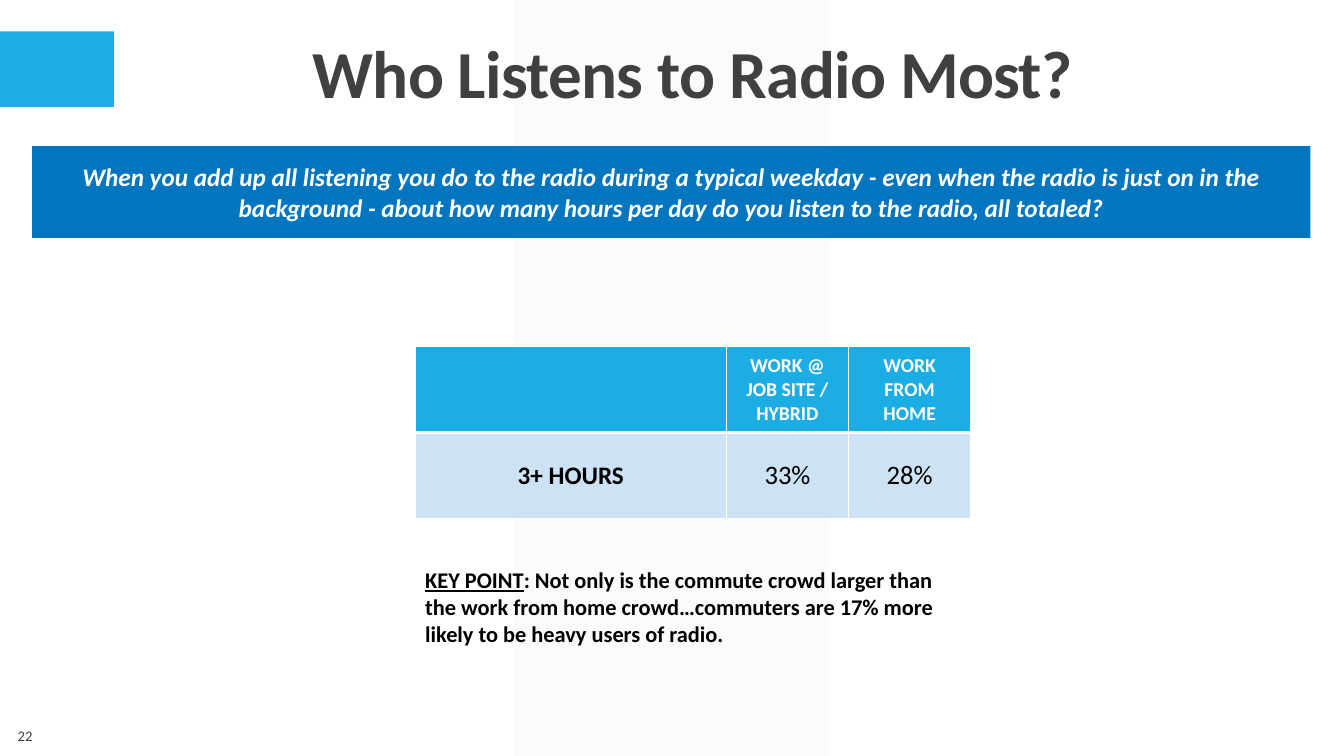
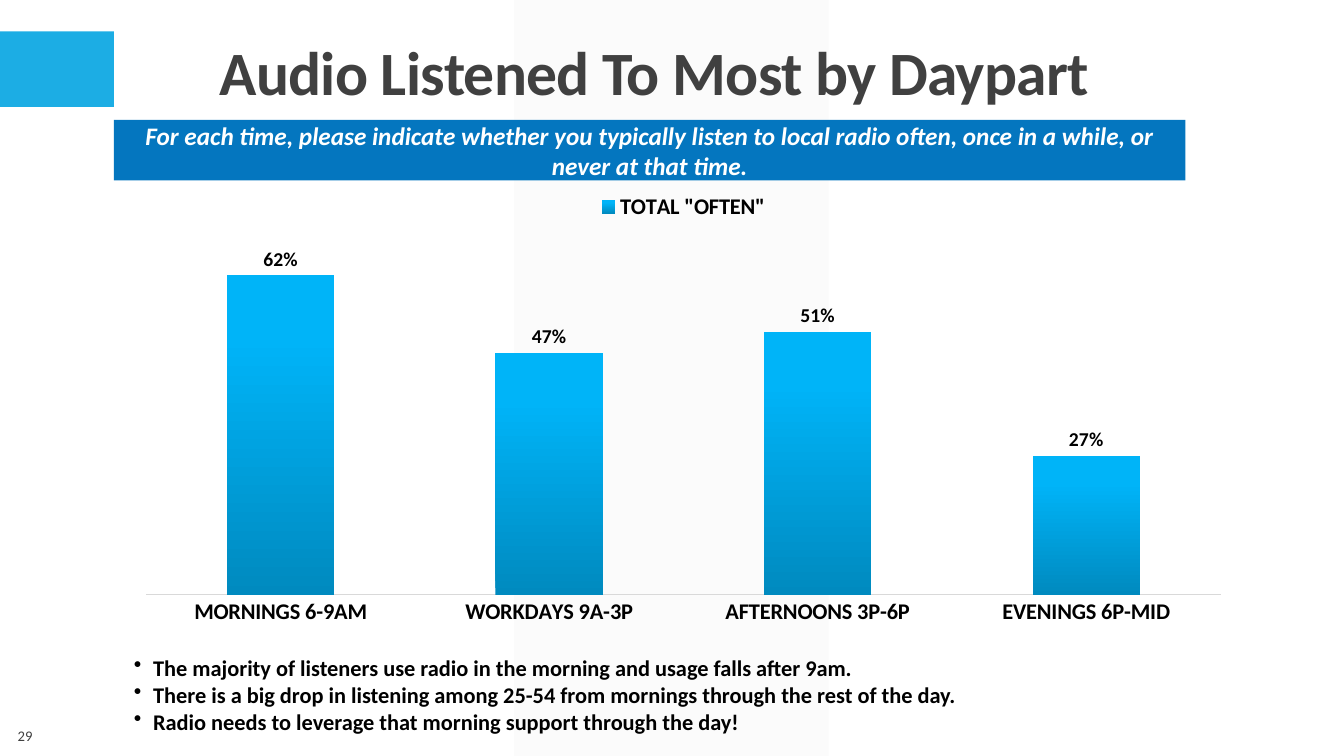
from dataclasses import dataclass

from lxml import etree
from pptx import Presentation
from pptx import util as u
from pptx.chart.data import CategoryChartData
from pptx.dml.color import RGBColor
from pptx.enum import chart as charts, shapes, text
from pptx.oxml import parse_xml
from pptx.oxml.ns import nsdecls, qn


@dataclass(frozen=True)
class Theme:
    font: str = "Calibri"
    accent: str = "1CADE4"
    banner: str = "0476BF"
    strip: str = "F2F2F2"
    strip_opacity: int = 30
    row: str = "CDE3F5"
    axis: str = "D9D9D9"
    white: str = "FFFFFF"
    black: str = "000000"
    grey: str = "404040"
    bar_stops: tuple = ((0, "008ABF"), (80, "00B4F8"), (100, "00B5F9"))
    body: float = 16
    question: float = 18
    small: float = 14
    number: float = 10.5


THEME = Theme()
WIDTH, HEIGHT = u.Inches(13.333), u.Inches(7.5)
CENTER, LEFT, RIGHT = (text.PP_ALIGN.CENTER, text.PP_ALIGN.LEFT,
                       text.PP_ALIGN.RIGHT)
MIDDLE, TOP, BOTTOM = (text.MSO_ANCHOR.MIDDLE, text.MSO_ANCHOR.TOP,
                       text.MSO_ANCHOR.BOTTOM)


def place(left, top, width, height):
    """Turn percentages of the slide into left, top, width, height."""
    return [int(share * size / 100) for share, size in
            zip((left, top, width, height), (WIDTH, HEIGHT) * 2)]


# Text
def set_font(font, size, color=THEME.black, bold=True, italic=None,
             underline=None):
    font.name, font.size = THEME.font, u.Pt(size)
    font.bold, font.italic, font.underline = bold, italic, underline
    font.color.rgb = RGBColor.from_string(color)


def add_bullet(para, indent=0.19):
    props = para._p.get_or_add_pPr()
    props.set("marL", str(u.Inches(indent)))
    props.set("indent", str(-u.Inches(indent)))
    etree.SubElement(props, qn("a:buChar")).set("char", "•")


def write(frame, paras, *, size, align=LEFT, anchor=TOP, bullet=False,
          line_spacing=None, tracking=None, lead=None, **font):
    """Fill a frame with paragraphs; lead is an underlined opening."""
    frame.word_wrap = True
    frame.vertical_anchor = anchor
    for index, words in enumerate(paras):
        para = frame.add_paragraph() if index else frame.paragraphs[0]
        para.alignment = align
        if line_spacing:
            para.line_spacing = line_spacing
        if bullet:
            add_bullet(para)
        if lead and not index:
            span = para.add_run()
            span.text = lead
            set_font(span.font, size, underline=True, **font)
        span = para.add_run()
        span.text = words
        set_font(span.font, size, **font)
        if tracking:
            span._r.get_or_add_rPr().set("spc", str(int(tracking * 100)))


def add_text(page, area, *paras, **style):
    box = page.shapes.add_textbox(*place(*area))
    write(box.text_frame, paras, **style)


# Shapes
def add_block(page, area, color, opacity=None):
    block = page.shapes.add_shape(shapes.MSO_SHAPE.RECTANGLE, *place(*area))
    block.shadow.inherit = False
    block.fill.solid()
    block.fill.fore_color.rgb = RGBColor.from_string(color)
    block.line.fill.background()
    if opacity is not None:
        tint = block._element.spPr.find(".//" + qn("a:srgbClr"))
        etree.SubElement(tint, qn("a:alpha")).set("val", str(opacity * 1000))
    return block


def add_page(deck, number, title, title_left, title_top, title_size,
             question, banner_area):
    """Start a page with background strip, accent, title, banner, number."""
    page = deck.slides.add_slide(deck.slide_layouts[6])
    add_block(page, (38.25, 0, 23.4, 100), THEME.strip, THEME.strip_opacity)
    add_block(page, (0, 4.15, 8.48, 10), THEME.accent)
    banner = add_block(page, banner_area, THEME.banner)
    write(banner.text_frame, [question], size=THEME.question, align=CENTER,
          anchor=MIDDLE, color=THEME.white, italic=True)
    add_text(page, (title_left, title_top, 82.5, 10), title, size=title_size,
             align=CENTER, anchor=BOTTOM, color=THEME.grey,
             line_spacing=0.9, tracking=-0.5)
    add_text(page, (0, 94.67, 3.15, 5.33), str(number), size=THEME.number,
             align=RIGHT, anchor=MIDDLE, color=THEME.grey, bold=False)
    return page


# Table
def style_cell(cell, fill, bottom):
    props = cell._tc.get_or_add_tcPr()
    for side, points in (("L", 1), ("R", 1), ("T", 1), ("B", bottom)):
        props.append(parse_xml(
            f'<a:ln{side} {nsdecls("a")} w="{u.Pt(points)}"><a:solidFill>'
            f'<a:srgbClr val="{THEME.white}"/></a:solidFill></a:ln{side}>'))
    cell.fill.solid()
    cell.fill.fore_color.rgb = RGBColor.from_string(fill)
    cell.vertical_anchor = MIDDLE


def add_grid(page, area, rows, column_shares):
    left, top, width, height = place(*area)
    grid = page.shapes.add_table(len(rows), len(column_shares), left, top,
                                 width, height).table
    grid.horz_banding = False
    for column, share in zip(grid.columns, column_shares):
        column.width = int(width * share / 100)
    for r, row in enumerate(rows):
        for c, words in enumerate(row):
            cell = grid.cell(r, c)
            if r == 0:
                style_cell(cell, THEME.accent, bottom=3)
                style = dict(size=THEME.small, color=THEME.white)
            else:
                style_cell(cell, THEME.row, bottom=1)
                cell.margin_left = cell.margin_right = u.Inches(0.01)
                cell.margin_top, cell.margin_bottom = u.Inches(0.01), 0
                style = dict(size=19 if c else 18, bold=c == 0)
            write(cell.text_frame, [words], align=CENTER, **style)


# Chart
def gradient(stops, angle):
    marks = "".join(f'<a:gs pos="{at * 1000}"><a:srgbClr val="{color}"/></a:gs>'
                    for at, color in stops)
    return parse_xml(f'<a:gradFill {nsdecls("a")}><a:gsLst>{marks}</a:gsLst>'
                     f'<a:lin ang="{angle * 60000}" scaled="0"/></a:gradFill>')


def add_columns(page, area, series_name, values):
    data = CategoryChartData(number_format="0%")
    data.categories = list(values)
    data.add_series(series_name, list(values.values()))
    chart = page.shapes.add_chart(charts.XL_CHART_TYPE.COLUMN_CLUSTERED,
                                  *place(*area), data).chart
    set_font(chart.font, 10, bold=False)
    chart.has_title = False
    chart.has_legend = True
    chart.legend.position = charts.XL_LEGEND_POSITION.TOP
    chart.legend.include_in_layout = False
    set_font(chart.legend.font, THEME.body)

    category = chart.category_axis
    category.major_tick_mark = charts.XL_TICK_MARK.NONE
    category.format.line.color.rgb = RGBColor.from_string(THEME.axis)
    category.format.line.width = u.Pt(1)
    set_font(category.tick_labels.font, THEME.body)
    scale = chart.value_axis
    scale.visible = scale.has_major_gridlines = False
    scale.minimum_scale, scale.maximum_scale = 0, 0.7

    plot = chart.plots[0]
    plot.vary_by_categories = False
    plot.gap_width, plot.overlap = 150, -25
    plot.has_data_labels = True
    labels = plot.data_labels
    labels.show_value = True
    labels.number_format, labels.number_format_is_linked = "0%", False
    labels.position = charts.XL_LABEL_POSITION.OUTSIDE_END
    set_font(labels.font, THEME.small)
    bars = plot.series[0]
    bars.invert_if_negative = False
    bars.format.line.fill.background()
    bars._element.spPr.insert(0, gradient(THEME.bar_stops, 270))


# Pages
def add_listeners_page(deck):
    page = add_page(
        deck, 22, "Who Listens to Radio Most?", 10.28, 5.6, 48,
        "When you add up all listening you do to the radio during a typical "
        "weekday - even when the radio is just on in the background - about "
        "how many hours per day do you listen to the radio, all totaled?",
        (2.4, 19.33, 95.1, 12.13))
    add_grid(page, (30.9, 45.87, 41.33, 22.67),
             [("", "WORK @ JOB SITE / HYBRID", "WORK FROM HOME"),
              ("3+ HOURS", "33%", "28%")], (56, 22, 22))
    add_text(page, (30.9, 74.27, 41.33, 12.13),
             ": Not only is the commute crowd larger than the work from home "
             "crowd…commuters are 17% more likely to be heavy users of radio.",
             lead="KEY POINT", size=THEME.body)


def add_daypart_page(deck):
    page = add_page(
        deck, 29, "Audio Listened To Most by Daypart", 7.43, 5.07, 44,
        "For each time, please indicate whether you typically listen to local "
        "radio often, once in a while, or never at that time.",
        (8.48, 15.87, 79.73, 8))
    add_columns(page, (9.23, 24, 83.25, 60), 'TOTAL "OFTEN"',
                {"MORNINGS 6-9AM": 0.62, "WORKDAYS 9A-3P": 0.47,
                 "AFTERNOONS 3P-6P": 0.51, "EVENINGS 6P-MID": 0.27})
    add_text(page, (9.23, 85.87, 64.73, 12.13),
             "The majority of listeners use radio in the morning and usage "
             "falls after 9am.",
             "There is a big drop in listening among 25-54 from mornings "
             "through the rest of the day.",
             "Radio needs to leverage that morning support through the day!",
             size=THEME.body, bullet=True)


def main():
    deck = Presentation()
    deck.slide_width, deck.slide_height = WIDTH, HEIGHT
    add_listeners_page(deck)
    add_daypart_page(deck)
    deck.save("out.pptx")


if __name__ == "__main__":
    main()
